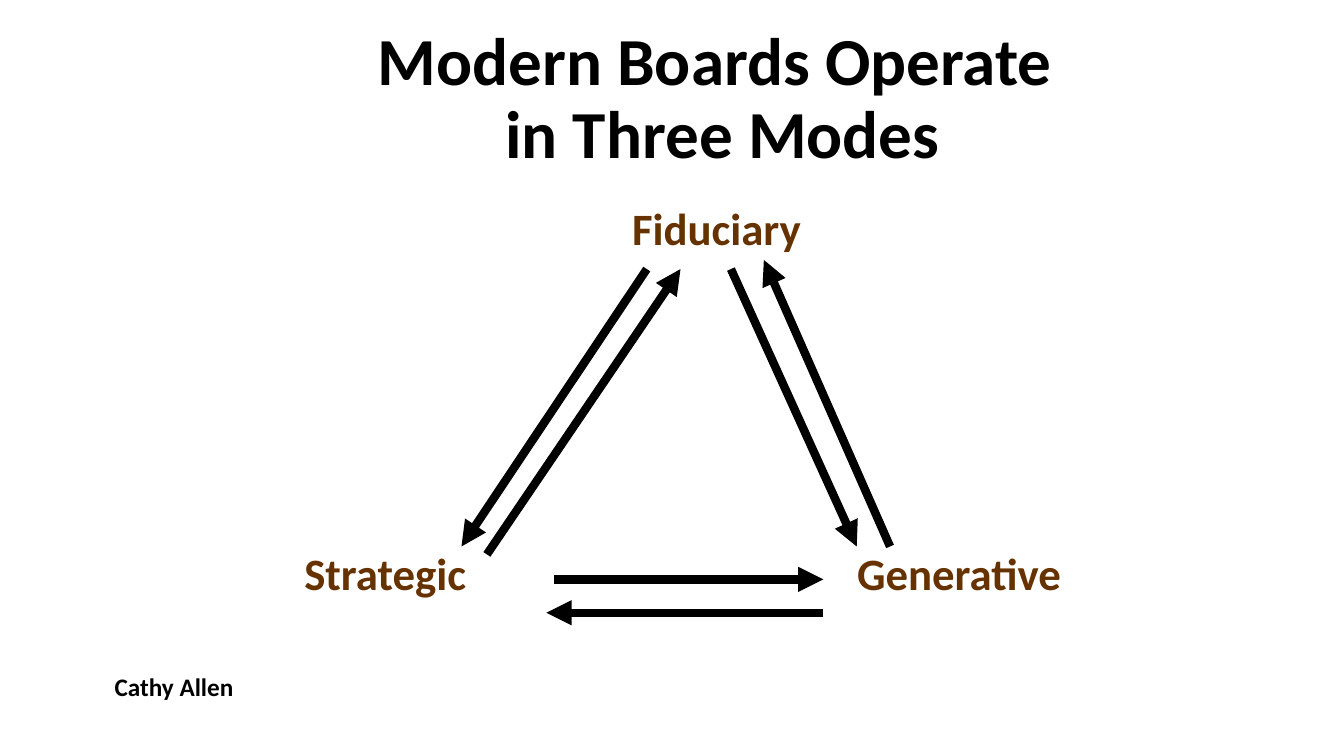
from pptx import Presentation
from pptx.dml.color import RGBColor as Rgb
from pptx.enum.shapes import MSO_CONNECTOR as Link
from pptx.enum.text import MSO_ANCHOR as Anchor, PP_ALIGN as Align
from pptx.oxml.ns import qn
from pptx.util import Cm, Pt
from lxml.etree import SubElement as Sub

TITLE = "Modern Boards Operate \vin Three Modes"
CREDIT = "Cathy Allen"
MODES = [
    ("Fiduciary", (15.01, 5.08), Align.CENTER),
    ("Strategic", (7.42, 13.77), Align.LEFT),
    ("Generative", (21.35, 13.77), Align.LEFT),
]
ARROWS = [
    ((12.27, 13.97), (17.15, 6.78)),
    ((16.3, 6.78), (11.63, 13.77)),
    ((13.97, 14.6), (20.75, 14.6)),
    ((20.75, 15.44), (13.77, 15.44)),
    ((18.42, 6.78), (21.59, 13.77)),
    ((22.43, 13.77), (19.25, 6.55)),
]
THEME = {
    "size": (33.87, 19.05),
    "mode_box": (6.1, 1.5),
    "line": Pt(6),
    "black": Rgb(0, 0, 0),
    "title": {"name": "Calibri", "size": Pt(48), "bold": True},
    "mode": {"name": "Calibri", "size": Pt(32), "bold": True},
    "credit": {"name": "Calibri", "size": Pt(18), "bold": True},
    "brown": Rgb(0x66, 0x33, 0),
}


def put(obj, vals):
    for key, val in vals.items():
        setattr(obj, key, val)


def add_text(slide, text, box, font, tint, para, anchor=Anchor.TOP):
    frame = slide.shapes.add_textbox(*map(Cm, box)).text_frame
    put(frame, {"word_wrap": True, "vertical_anchor": anchor, "text": text})
    first = frame.paragraphs[0]
    put(first, para)
    for run in first.runs:
        put(run.font, font)
        run.font.color.rgb = tint


def add_arrow(slide, start, end):
    arrow = slide.shapes.add_connector(Link.STRAIGHT, *map(Cm, start + end))
    arrow.line.width = THEME["line"]
    arrow.line.color.rgb = THEME["black"]
    Sub(arrow.line._get_or_add_ln(), qn("a:tailEnd"), type="triangle")
    Sub(arrow._element.spPr, qn("a:effectLst"))


def main():
    deck = Presentation()
    wide, high = map(Cm, THEME["size"])
    put(deck, {"slide_width": wide, "slide_height": high})
    slide = deck.slides.add_slide(deck.slide_layouts[6])
    add_text(slide, TITLE, (8.05, 0.84, 20.32, 3.38), THEME["title"],
             THEME["black"], {"alignment": Align.CENTER, "line_spacing": 0.9},
             Anchor.MIDDLE)
    for name, spot, align in MODES:
        add_text(slide, name, spot + THEME["mode_box"], THEME["mode"],
                 THEME["brown"], {"alignment": align, "line_spacing": 0.9})
    for start, end in ARROWS:
        add_arrow(slide, start, end)
    add_text(slide, CREDIT, (2.64, 16.79, 3.56, 1.02), THEME["credit"],
             THEME["black"], {"alignment": Align.LEFT})
    deck.save("out.pptx")


if __name__ == "__main__":
    main()
